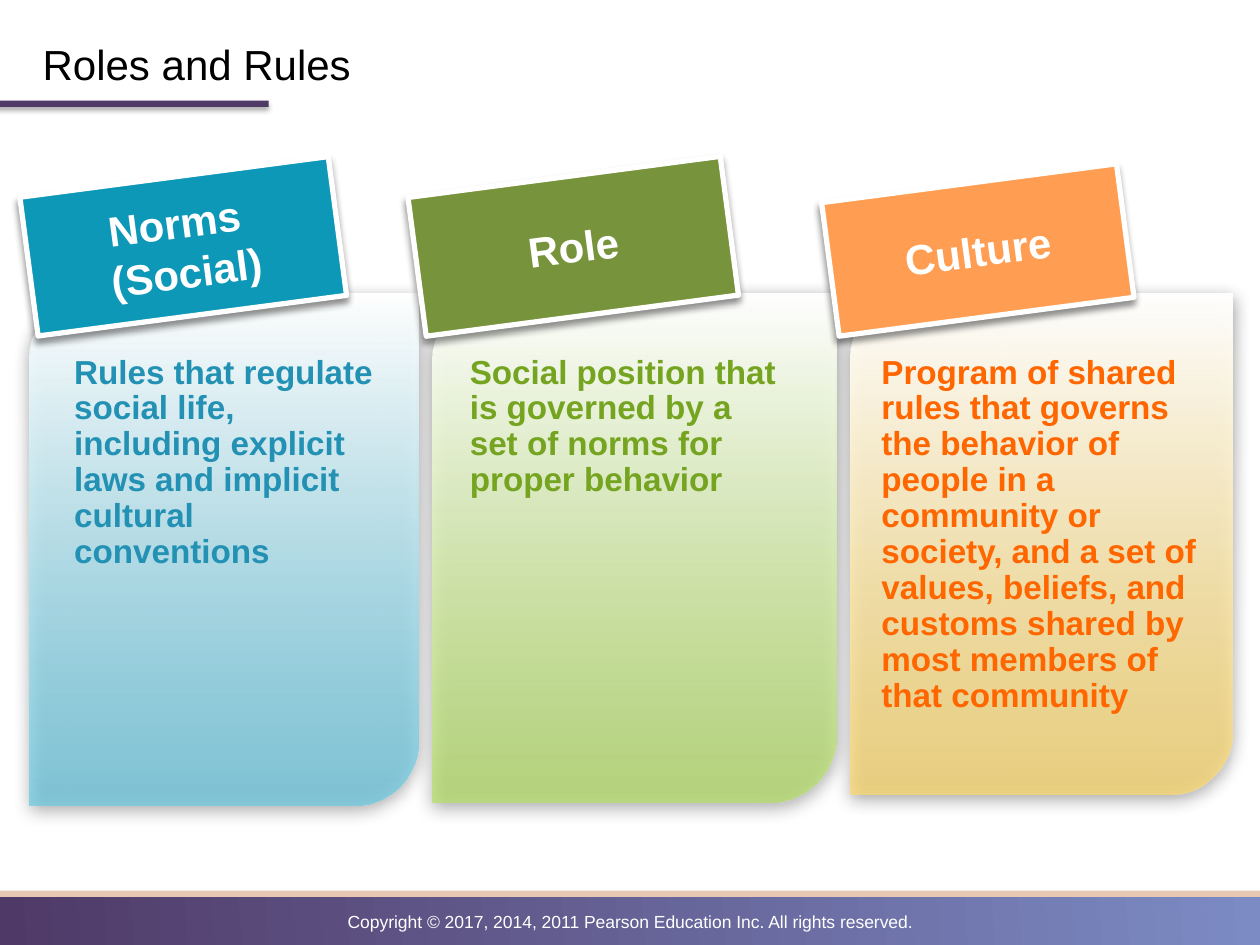
from dataclasses import dataclass

from lxml import etree
from pptx import Presentation
from pptx import util as u
from pptx.dml.color import RGBColor
from pptx.enum import shapes, text
from pptx.oxml.ns import qn

WHITE = RGBColor(0xFF, 0xFF, 0xFF)
BLACK = RGBColor(0, 0, 0)
PURPLE = RGBColor(0x4F, 0x39, 0x67)
PERIWINKLE = RGBColor(0x7C, 0x8B, 0xC4)
SAND = RGBColor(0xE7, 0xC8, 0xB3)
TEAL = RGBColor(0x0D, 0x98, 0xB8)
TEAL_TEXT = RGBColor(0x23, 0x91, 0xB3)
TEAL_PALE = RGBColor(0x6E, 0xCB, 0xE3)
OLIVE = RGBColor(0x77, 0x93, 0x3C)
GREEN_TEXT = RGBColor(0x75, 0xA4, 0x20)
GREEN_PALE = RGBColor(0xB7, 0xE1, 0x6A)
APRICOT = RGBColor(0xFF, 0x9E, 0x52)
ORANGE_TEXT = RGBColor(0xFF, 0x66, 0x00)
YELLOW_PALE = RGBColor(0xFF, 0xDA, 0x6E)

RECT = shapes.MSO_SHAPE.RECTANGLE
CARD = shapes.MSO_SHAPE.ROUND_2_DIAG_RECTANGLE
ROUNDED = shapes.MSO_SHAPE.ROUNDED_RECTANGLE


@dataclass
class Column:
    heading: str
    body: str
    label_color: RGBColor
    card_color: RGBColor
    text_color: RGBColor
    opacity: int
    label_box: tuple
    card_box: tuple
    body_box: tuple


class Page:
    font = "Arial"

    def __init__(self, slide):
        self.slide = slide

    def shape(self, kind, box, fill=None):
        item = self.slide.shapes.add_shape(kind, *map(u.Pt, box))
        item.shadow.inherit = False
        item.line.fill.background()
        if fill is None:
            item.fill.background()
        else:
            item.fill.solid()
            item.fill.fore_color.rgb = fill
        return item

    def gradient(self, item, start, end, angle, opacity=100):
        """Fill from start to end; angle counts counter-clockwise."""
        item.fill.gradient()
        item.fill.gradient_angle = angle
        for stop, color, place in zip(item.fill.gradient_stops, (start, end), (0, 1)):
            stop.color.rgb = color
            stop.position = place
        if opacity < 100:
            last = list(item._element.spPr.iter(qn("a:srgbClr")))[-1]
            etree.SubElement(last, qn("a:alpha"), val=str(opacity * 1000))

    def shadow(self, item, opacity, blur, distance, direction):
        effects = item._element.spPr.find(qn("a:effectLst"))
        outer = etree.SubElement(
            effects, qn("a:outerShdw"), blurRad=str(u.Pt(blur)), dist=str(u.Pt(distance)),
            dir=str(direction * 60000), algn="ctr", rotWithShape="0")
        color = etree.SubElement(outer, qn("a:srgbClr"), val=str(BLACK))
        etree.SubElement(color, qn("a:alpha"), val=str(opacity * 1000))

    def label(self, item, words, size, color, bold=False, wrap=True,
              align=text.PP_ALIGN.LEFT, anchor=text.MSO_ANCHOR.TOP, spacing=None):
        """Put styled words into an existing shape."""
        frame = item.text_frame
        frame.text = words
        frame.word_wrap = wrap
        frame.vertical_anchor = anchor
        for para in frame.paragraphs:
            para.alignment = align
            para.line_spacing = spacing
            for span in para.runs:
                span.font.name = self.font
                span.font.size = u.Pt(size)
                span.font.bold = bold
                span.font.color.rgb = color

    def text(self, box, words, size, color, **style):
        item = self.slide.shapes.add_textbox(*map(u.Pt, box))
        self.label(item, words, size, color, **style)

    def column(self, column):
        """Draw a card, its description and the tilted tag on top."""
        card = self.shape(CARD, column.card_box, WHITE)
        self.gradient(card, WHITE, column.card_color, 270, column.opacity)
        self.shadow(card, 43, 10, 3, 90)

        body = self.shape(ROUNDED, column.body_box)
        body.adjustments[0] = 0
        self.label(body, column.body, 19, column.text_color, bold=True, spacing=0.9)

        tag = self.shape(RECT, column.label_box, column.label_color)
        tag.line.color.rgb = WHITE
        tag.line.width = u.Pt(3)
        tag.rotation = 352.5
        self.shadow(tag, 43, 4, 3, 102)
        self.label(tag, column.heading, 24, WHITE, bold=True, wrap=False,
                   align=text.PP_ALIGN.CENTER, anchor=text.MSO_ANCHOR.MIDDLE)


COLUMNS = [
    Column("Norms \n(Social)",
           "Rules that regulate social life, including explicit laws and implicit "
           "cultural conventions",
           TEAL, TEAL_PALE, TEAL_TEXT, 73,
           (15.8, 100.8, 177.8, 80), (17, 167.6, 222, 292.5), (35.3, 199.5, 193, 209.5)),
    Column("Role",
           "Social position that is governed by a set of norms for proper behavior",
           OLIVE, GREEN_PALE, GREEN_TEXT, 72,
           (237.6, 100.8, 180, 80), (247, 167.6, 231, 291), (261.4, 199.5, 193.7, 196.5)),
    Column("Culture",
           "Program of shared rules that governs the behavior of people in a community "
           "or society, and a set of values, beliefs, and customs shared by most members "
           "of that community",
           APRICOT, YELLOW_PALE, ORANGE_TEXT, 72,
           (473.8, 104.4, 170, 77), (486, 167.6, 218.5, 286.5), (496.6, 199.5, 206, 229.7)),
]


def main():
    deck = Presentation()
    deck.slide_width, deck.slide_height = u.Pt(720), u.Pt(540)
    page = Page(deck.slides.add_slide(deck.slide_layouts[6]))

    footer = page.shape(RECT, (0, 510, 720, 32), PURPLE)
    page.gradient(footer, PURPLE, PERIWINKLE, 4)
    page.shape(RECT, (0, 509, 723.6, 3.6), SAND)
    page.text((0, 517, 720, 19.4),
              "Copyright © 2017, 2014, 2011 Pearson Education Inc. All rights reserved.",
              10, WHITE, align=text.PP_ALIGN.CENTER)

    underline = page.shape(RECT, (-13.5, 57.5, 167, 3.6), PURPLE)
    page.shadow(underline, 35, 3.1, 1.8, 90)
    page.text((17.3, 15.1, 612, 42.5), "Roles and Rules", 24, BLACK,
              anchor=text.MSO_ANCHOR.MIDDLE)

    for column in COLUMNS:
        page.column(column)
    deck.save("out.pptx")


if __name__ == "__main__":
    main()
